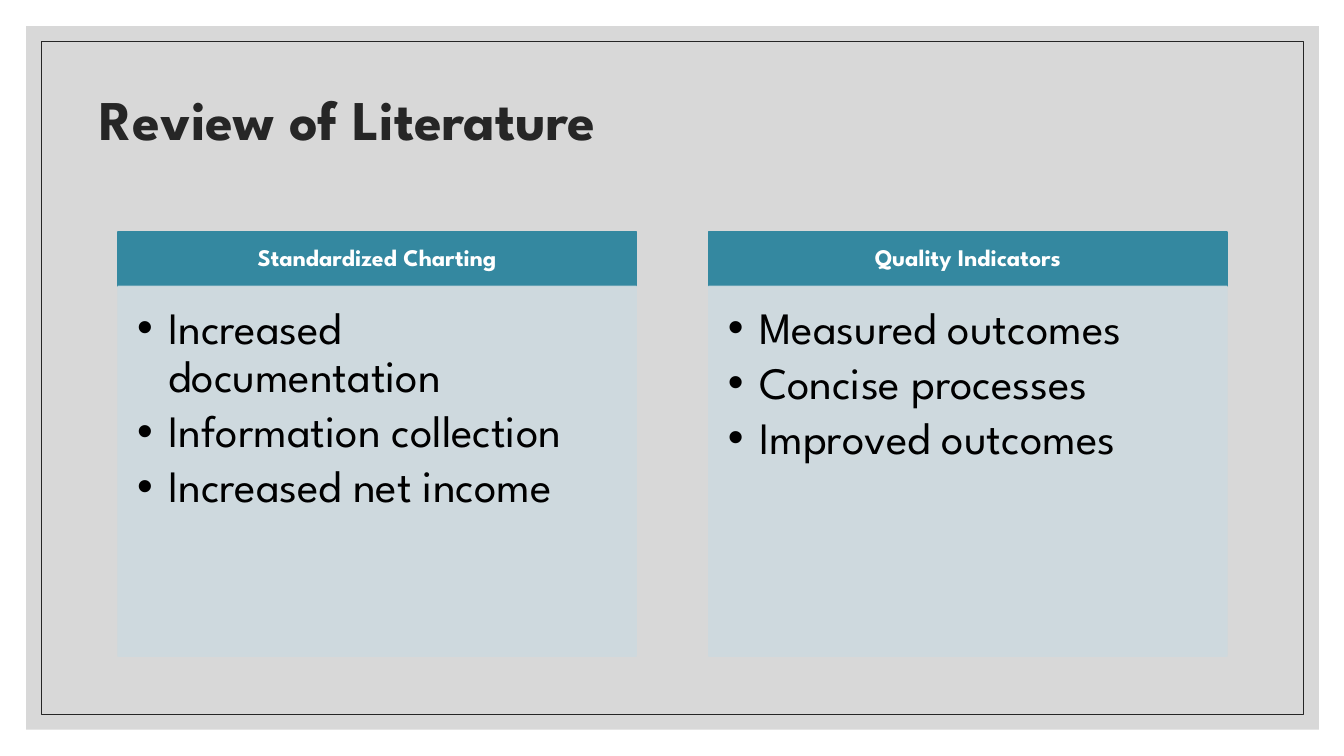
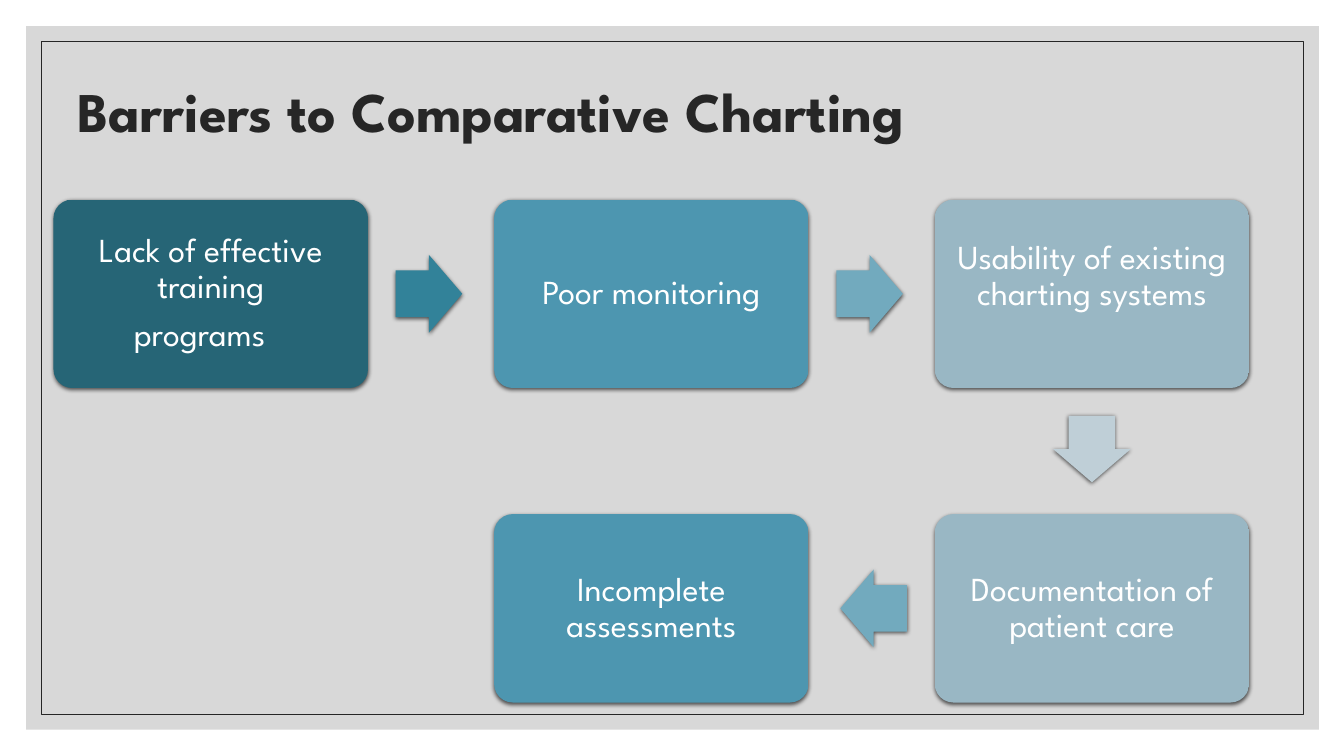
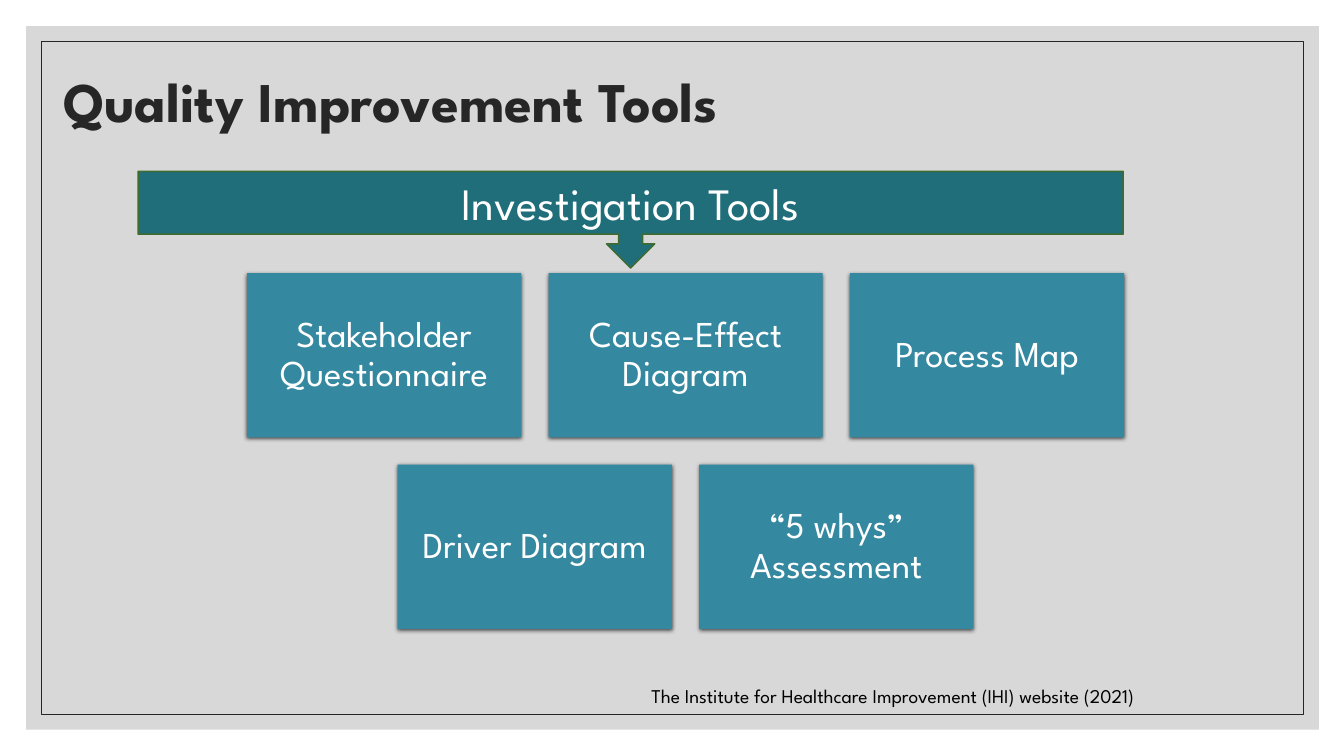
from lxml.etree import SubElement
from pptx import Presentation
from pptx.dml.color import RGBColor
from pptx.enum.shapes import MSO_SHAPE
from pptx.enum.text import MSO_ANCHOR, MSO_AUTO_SIZE, PP_ALIGN
from pptx.oxml import parse_xml
from pptx.oxml.ns import nsdecls, qn
from pptx.util import Inches, Pt

FONT = "League Spartan"
INK, BLACK, WHITE = "262626", "000000", "FFFFFF"
FRAME_GRAY, TEAL, DEEP_TEAL, PALE = "BFBFBF", "3488A0", "1F6E7A", "CEDADF"
OLIVE = "406B2F"

TITLE_ONLY, TITLE_AND_BODY, COMPARISON = 5, 1, 4


def color(hex_string):
    return RGBColor.from_string(hex_string)


def set_opacity(element, percent):
    """Make every RGB colour below the element partly transparent."""
    for srgb in element.iter(qn("a:srgbClr")):
        SubElement(srgb, qn("a:alpha")).set("val", str(percent * 1000))


def add_shadow(shape):
    shape._element.spPr.append(parse_xml(
        f'<a:effectLst {nsdecls("a")}>'
        '<a:outerShdw blurRad="38100" dist="12700" dir="5400000" rotWithShape="0">'
        '<a:srgbClr val="000000"><a:alpha val="63000"/></a:srgbClr>'
        '</a:outerShdw></a:effectLst>'))


def write_text(shape, lines, size, hex_color=WHITE, bold=False,
               align=PP_ALIGN.CENTER, anchor=MSO_ANCHOR.MIDDLE,
               insets=(0.1, 0.05, 0.1, 0.05), line_spacing=0.9,
               before=0, after=0, bullet_indent=0):
    """Write one paragraph per line; insets are left, top, right, bottom."""
    frame = shape.text_frame
    frame.word_wrap = True
    frame.auto_size = MSO_AUTO_SIZE.NONE
    frame.vertical_anchor = anchor
    (frame.margin_left, frame.margin_top,
     frame.margin_right, frame.margin_bottom) = map(Inches, insets)
    frame.text = "\n".join(lines)
    for paragraph in frame.paragraphs:
        paragraph.alignment = align
        paragraph.line_spacing = line_spacing
        paragraph.space_before, paragraph.space_after = Pt(before), Pt(after)
        properties = paragraph._p.get_or_add_pPr()
        properties.set("marL", str(Inches(bullet_indent)))
        properties.set("indent", str(-Inches(bullet_indent)))
        if bullet_indent:
            SubElement(properties, qn("a:buChar")).set("char", "•")
        else:
            SubElement(properties, qn("a:buNone"))
        font = paragraph.runs[0].font
        font.name, font.size, font.bold = FONT, Pt(size), bold
        font.color.rgb = color(hex_color)


class Deck:
    """Shared style plus the slide being built."""

    def __init__(self):
        self.presentation = Presentation()
        self.presentation.slide_width = Inches(13.33)
        self.presentation.slide_height = Inches(7.5)
        self.slide = None

    def add_slide(self, layout, title, left, top, width, height):
        first = self.slide is None
        layouts = self.presentation.slide_layouts
        self.slide = self.presentation.slides.add_slide(layouts[layout])
        if first:
            self.add_master_frame()
        shape = self.placeholder(0, left, top, width, height)
        write_text(shape, [title], 40, INK, bold=True, align=PP_ALIGN.LEFT)

    def add_master_frame(self):
        """Put the gray panel and its thin outline on the slide master."""
        panel = self.shape(MSO_SHAPE.RECTANGLE, 0.26, 0.26, 12.82, 6.98, FRAME_GRAY)
        set_opacity(panel._element, 60)
        outline = self.shape(MSO_SHAPE.RECTANGLE, 0.41, 0.41, 12.52, 6.68,
                             line=INK, line_width=0.5)
        tree = self.presentation.slide_master.shapes._spTree
        for position, shape in enumerate((panel, outline), start=2):
            tree.insert(position, shape._element)

    def paint(self, shape, fill=None, line=None, line_width=1):
        """A fill is None, one colour, or a pair for a vertical gradient."""
        if fill is None:
            shape.fill.background()
        elif isinstance(fill, tuple):
            shape.fill.gradient()
            shape.fill.gradient_angle = 270
            for stop, hex_string in zip(shape.fill.gradient_stops, fill):
                stop.color.rgb = color(hex_string)
        else:
            shape.fill.solid()
            shape.fill.fore_color.rgb = color(fill)
        if line:
            shape.line.color.rgb = color(line)
            shape.line.width = Pt(line_width)
        else:
            shape.line.fill.background()

    def placeholder(self, index, left, top, width, height):
        shape = self.slide.placeholders[index]
        shape.left, shape.top = Inches(left), Inches(top)
        shape.width, shape.height = Inches(width), Inches(height)
        return shape

    def shape(self, kind, left, top, width, height, fill=None, line=None,
              line_width=1, shadow=False):
        shape = self.slide.shapes.add_shape(
            kind, Inches(left), Inches(top), Inches(width), Inches(height))
        self.paint(shape, fill, line, line_width)
        if shadow:
            add_shadow(shape)
        else:
            shape.shadow.inherit = False
        return shape

    def column(self, index, left, heading, items):
        """Heading band over a bulleted pane."""
        band = self.placeholder(index, left, 2.3, 5.14, 0.54)
        self.paint(band, TEAL, TEAL)
        write_text(band, [heading], 17, bold=True, insets=(0.13, 0.08, 0.13, 0.08))
        pane = self.placeholder(index + 1, left, 2.84, 5.14, 3.67)
        self.paint(pane, PALE, PALE)
        set_opacity(pane._element.spPr, 90)
        write_text(pane, items, 32, BLACK, align=PP_ALIGN.LEFT,
                   anchor=MSO_ANCHOR.TOP, insets=(0.19, 0.19, 0.25, 0.28),
                   after=4.8, bullet_indent=0.31)

    def step(self, left, top, width, height, lines, fill, bottom_inset):
        box = self.shape(MSO_SHAPE.ROUNDED_RECTANGLE, left, top, width, height,
                         fill, shadow=True)
        box.adjustments[0] = 0.1
        write_text(box, lines, 24, insets=(0.1, 0.1, 0.1, bottom_inset), after=8.4)
        return box

    def block_arrow(self, center_x, center_y, rotation, fill):
        width, height = 0.66, 0.77
        arrow = self.shape(MSO_SHAPE.RIGHT_ARROW, center_x - width / 2,
                           center_y - height / 2, width, height, fill, shadow=True)
        arrow.adjustments[0], arrow.adjustments[1] = 0.6, 0.5
        arrow.rotation = rotation

    def tile(self, left, top, width, height, label):
        box = self.shape(MSO_SHAPE.RECTANGLE, left, top, width, height, TEAL,
                         shadow=True)
        write_text(box, [label], 26, insets=(0.11,) * 4)


def build_literature(deck):
    deck.add_slide(COMPARISON, "Review of Literature", 0.89, 0.7, 11.28, 1.03)
    deck.column(1, 1.17, "Standardized Charting",
                ["Increased documentation", "Information collection",
                 "Increased net income"])
    deck.column(3, 7.03, "Quality Indicators",
                ["Measured outcomes", "Concise processes", "Improved outcomes"])


def build_barriers(deck):
    deck.add_slide(TITLE_ONLY, "Barriers to Comparative Charting",
                   0.67, 0.7, 11.49, 0.86)
    width, height = 3.12, 1.87
    left, top, column_pitch, row_pitch = 0.53, 1.98, 4.37, 3.12
    dark, middle, light = ("266576", "246577"), ("4D96B0", "4A96B1"), ("99B7C4", "96B6C4")

    # Steps: column, row, text, fill, bottom inset
    steps = [
        (0, 0, ["Lack of effective training", "programs"], dark, 0.1),
        (1, 0, ["Poor monitoring"], middle, 0.1),
        (2, 0, ["Usability of existing charting systems"], light, 0.44),
        (2, 1, ["Documentation of patient care"], light, 0.1),
        (1, 1, ["Incomplete assessments"], middle, 0.1),
    ]
    boxes = [deck.step(left + column * column_pitch, top + row * row_pitch,
                       width, height, lines, fill, inset)
             for column, row, lines, fill, inset in steps]
    last_line = boxes[0].text_frame.paragraphs[1]
    last_line._p.get_or_add_pPr().set("marR", str(Inches(0.22)))

    # Arrows sit between neighbours, slightly nearer the earlier step
    rotations = {(1, 0): 0, (0, 1): 90, (-1, 0): 180}
    nudge = 0.02
    for start, end, fill in zip(steps, steps[1:],
                                ("328299", "72AABE", "BFCFD7", "72AABE")):
        across, down = end[0] - start[0], end[1] - start[1]
        center_x = left + width / 2 + (start[0] + end[0]) / 2 * column_pitch
        center_y = top + height / 2 + (start[1] + end[1]) / 2 * row_pitch
        deck.block_arrow(center_x - nudge * across, center_y - nudge * down,
                         rotations[across, down], fill)


def build_tools(deck):
    deck.add_slide(TITLE_AND_BODY, "Quality Improvement Tools", 0.53, 0.56, 11, 0.96)
    citation = deck.placeholder(1, 6.36, 6.71, 6.24, 0.44)
    write_text(citation, ["The Institute for Healthcare Improvement (IHI) website (2021)"],
               13.9, BLACK, align=PP_ALIGN.LEFT, anchor=MSO_ANCHOR.TOP,
               line_spacing=1.1, before=9)
    callout = deck.shape(MSO_SHAPE.DOWN_ARROW_CALLOUT, 1.37, 1.7, 9.77, 0.96,
                         DEEP_TEAL, OLIVE)
    write_text(callout, ["Investigation Tools"], 32, line_spacing=1.0)

    # Rows of tiles, each centred on the same axis
    width, height, gap, axis, top = 2.72, 1.63, 0.27, 6.8, 2.71
    rows = [["Stakeholder Questionnaire", "Cause-Effect Diagram", "Process Map"],
            ["Driver Diagram", "“5 whys” Assessment"]]
    for row, labels in enumerate(rows):
        row_left = axis - (len(labels) * (width + gap) - gap) / 2
        for column, label in enumerate(labels):
            deck.tile(row_left + column * (width + gap), top + row * (height + gap),
                      width, height, label)


def main():
    deck = Deck()
    build_literature(deck)
    build_barriers(deck)
    build_tools(deck)
    deck.presentation.save("out.pptx")


if __name__ == "__main__":
    main()
